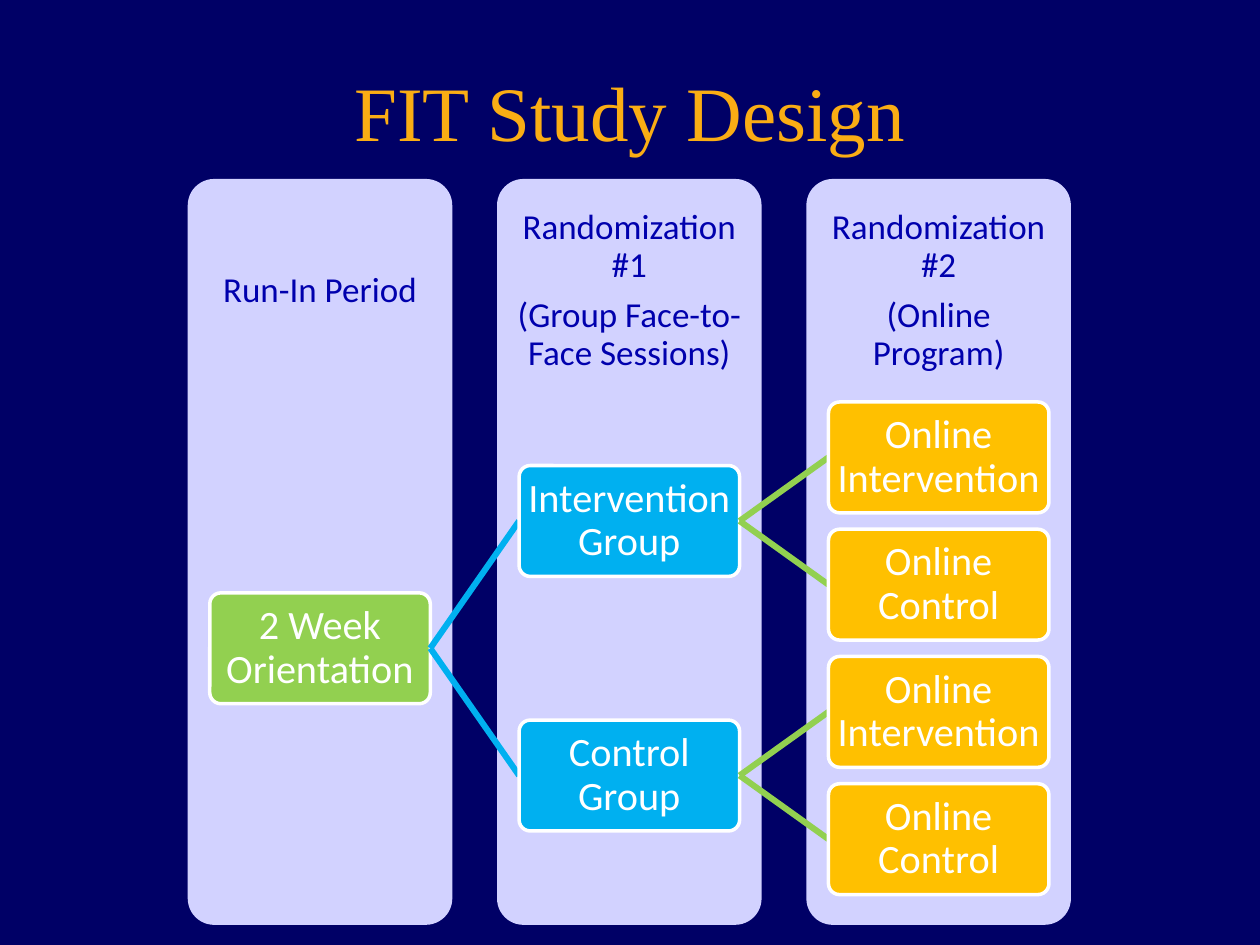
from dataclasses import dataclass
from lxml.etree import SubElement
from pptx import Presentation
from pptx.dml.color import RGBColor as RGB
from pptx.enum.shapes import MSO_CONNECTOR as CONN, MSO_SHAPE as SHAPE
from pptx.enum.text import MSO_ANCHOR as ANCHOR, PP_ALIGN as ALIGN
from pptx.oxml.ns import qn
from pptx.util import Inches, Pt


@dataclass(frozen=True)
class Theme:
    back: str = "000066"
    title: str = "FAAD14"
    panel: str = "D2D2FF"
    heading: str = "0000AD"
    white: str = "FFFFFF"
    levels: tuple = ("92D050", "00B0F0", "FFC000")
    links: tuple = ("00B0F0", "92D050")
    title_font: str = "Times New Roman"
    body_font: str = "Calibri"
    title_size: int = 44
    heading_size: int = 20
    node_size: int = 23


T = Theme()
TITLE = "FIT Study Design"
STAGES = [
    ["Run-In Period"],
    ["Randomization #1", "(Group Face-to-Face Sessions)"],
    ["Randomization #2", "(Online Program)"],
]
ONLINE = [("Online Intervention", []), ("Online Control", [])]
TREE = ("2 Week Orientation",
        [("Intervention Group", ONLINE), ("Control Group", ONLINE)])

W, H = 10, 7.5
COL_X, COL_STEP, COL_W = 1.49, 2.455, 2.1
COL_Y, COL_H = 1.42, 5.92
HEAD_H = COL_H * 0.3
NODE_W, NODE_H = 1.75, 0.88
ROW_Y, ROW_STEP = 3.63, 1.01


def write(shape, lines, font, size, color, inset, spacing=0.9):
    tf = shape.text_frame
    tf.word_wrap = True
    tf.vertical_anchor = ANCHOR.MIDDLE
    tf.margin_left = tf.margin_right = Inches(inset)
    tf.margin_top = tf.margin_bottom = Inches(inset)
    tf.text = "\n".join(lines)
    for p in tf.paragraphs:
        p.alignment = ALIGN.CENTER
        p.line_spacing = spacing
        p.space_after = Pt(size * 0.35)
        p.font.name, p.font.size = font, Pt(size)
        p.font.color.rgb = RGB.from_string(color)


def add_text(s, x, y, w, h, *style):
    write(s.shapes.add_textbox(*map(Inches, (x, y, w, h))), *style)


def add_box(s, x, y, w, h, fill, line=None):
    sp = s.shapes.add_shape(SHAPE.ROUNDED_RECTANGLE, *map(Inches, (x, y, w, h)))
    sp.adjustments[0] = 0.1
    sp.shadow.inherit = False
    sp.fill.solid()
    sp.fill.fore_color.rgb = RGB.from_string(fill)
    if line:
        sp.line.color.rgb = RGB.from_string(line)
        sp.line.width = Pt(2)
    else:
        sp.line.fill.background()
    return sp


def add_link(s, x1, y1, x2, y2, color):
    c = s.shapes.add_connector(CONN.STRAIGHT, *map(Inches, (x1, y1, x2, y2)))
    c.line.color.rgb = RGB.from_string(color)
    c.line.width = Pt(3.5)
    SubElement(c._element.spPr, qn("a:effectLst"))


def leaves(node):
    return sum(map(leaves, node[1])) or 1


def center(node, row):
    return ROW_Y + ROW_STEP * (row + (leaves(node) - 1) / 2)


def draw(s, node, level=0, row=0):
    label, children = node
    x = COL_X + level * COL_STEP + (COL_W - NODE_W) / 2
    y = center(node, row)
    sp = add_box(s, x, y - NODE_H / 2, NODE_W, NODE_H, T.levels[level], T.white)
    write(sp, [label], T.body_font, T.node_size, T.white, 0)
    for child in children:
        add_link(s, x + NODE_W, y, x + COL_STEP, center(child, row), T.links[level])
        draw(s, child, level + 1, row)
        row += leaves(child)


def main():
    prs = Presentation()
    prs.slide_width, prs.slide_height = Inches(W), Inches(H)
    s = prs.slides.add_slide(prs.slide_layouts[6])
    s.background.fill.solid()
    s.background.fill.fore_color.rgb = RGB.from_string(T.back)
    add_text(s, 0, 0, W, 1.75, [TITLE], T.title_font, T.title_size, T.title, 0.05, 1)
    for i, lines in enumerate(STAGES):
        x = COL_X + i * COL_STEP
        add_box(s, x, COL_Y, COL_W, COL_H, T.panel)
        add_text(s, x, COL_Y, COL_W, HEAD_H, lines,
                 T.body_font, T.heading_size, T.heading, 0.16)
    draw(s, TREE)
    prs.save("out.pptx")


if __name__ == "__main__":
    main()
